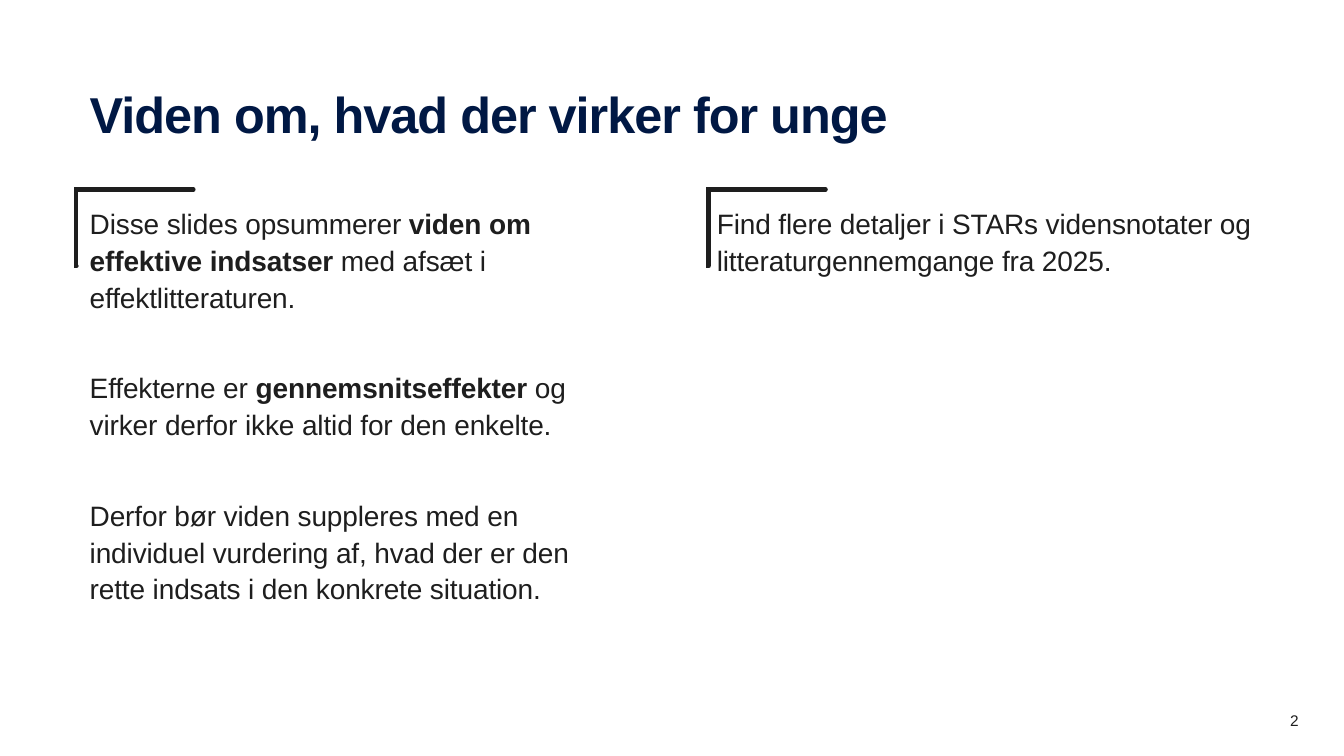
from dataclasses import dataclass

from lxml import etree
from pptx import Presentation
from pptx import util as u
from pptx.dml.color import RGBColor
from pptx.enum import shapes, text
from pptx.oxml.ns import qn
from pptx.slide import Slide


@dataclass(frozen=True)
class Theme:
    font: str = "Arial"
    title_color: str = "001844"
    ink: str = "1E1E1E"
    title_size: int = 36
    body_size: int = 20
    number_size: int = 11
    line_width: int = 3


@dataclass(frozen=True)
class Span:
    content: str
    bold: bool = False


@dataclass(frozen=True)
class TextBlock:
    left: float
    top: float
    width: float
    height: float
    paragraphs: list[list[Span]]
    size: int
    color: str
    line_spacing: float = 1.0
    space_after: int = 0
    tracking: int = 0
    align: text.PP_ALIGN = text.PP_ALIGN.LEFT
    anchor: text.MSO_ANCHOR = text.MSO_ANCHOR.TOP


@dataclass(frozen=True)
class Column:
    text_left: float
    bracket_left: float
    paragraphs: list[list[Span]]


THEME = Theme()
BRACKET_TOP, BRACKET_WIDTH, BRACKET_HEIGHT = 1.88, 1.16, 0.76
BRACKET_BEND = 100300

COLUMNS = [
    Column(7.11, 7.03, [
        [Span("Find flere detaljer i STARs vidensnotater og litteraturgennemgange fra 2025.")],
    ]),
    Column(0.89, 0.76, [
        [Span("Disse slides opsummerer "),
         Span("viden om effektive indsatser ", True),
         Span("med afsæt i effektlitteraturen.")],
        [Span("Effekterne er "),
         Span("gennemsnitseffekter", True),
         Span(" og virker derfor ikke altid for den enkelte.")],
        [Span("Derfor bør viden suppleres med en individuel vurdering af, "
              "hvad der er den rette indsats i den konkrete situation.")],
    ]),
]


def add_text(page: Slide, block: TextBlock) -> None:
    box = page.shapes.add_textbox(
        u.Inches(block.left), u.Inches(block.top),
        u.Inches(block.width), u.Inches(block.height))
    frame = box.text_frame
    frame.word_wrap = True
    frame.vertical_anchor = block.anchor
    frame.margin_left = frame.margin_right = frame.margin_top = frame.margin_bottom = 0
    for index, spans in enumerate(block.paragraphs):
        para = frame.add_paragraph() if index else frame.paragraphs[0]
        para.alignment = block.align
        para.line_spacing = block.line_spacing
        para.space_after = u.Pt(block.space_after)
        para.font.name = THEME.font
        para.font.size = u.Pt(block.size)
        para.font.color.rgb = RGBColor.from_string(block.color)
        for span in spans:
            run = para.add_run()
            run.text = span.content
            run.font.bold = span.bold
            run.font._element.set("spc", str(block.tracking))


def add_bracket(page: Slide, left: float) -> None:
    bracket = page.shapes.add_connector(
        shapes.MSO_CONNECTOR.ELBOW,
        u.Inches(left + BRACKET_WIDTH), u.Inches(BRACKET_TOP),
        u.Inches(left), u.Inches(BRACKET_TOP + BRACKET_HEIGHT))
    bracket.line.color.rgb = RGBColor.from_string(THEME.ink)
    bracket.line.width = u.Pt(THEME.line_width)
    properties = bracket._element.spPr
    guides = properties.find(qn("a:prstGeom")).find(qn("a:avLst"))
    etree.SubElement(guides, qn("a:gd"), name="adj1", fmla=f"val {BRACKET_BEND}")
    outline = properties.find(qn("a:ln"))
    outline.set("cap", "rnd")
    etree.SubElement(outline, qn("a:miter"), lim="800000")
    etree.SubElement(properties, qn("a:effectLst"))


def main() -> None:
    deck = Presentation()
    deck.slide_width, deck.slide_height = u.Inches(13.33), u.Inches(7.5)
    page = deck.slides.add_slide(deck.slide_layouts[6])

    add_text(page, TextBlock(
        12.44, 7.08, 0.44, 0.14, [[Span("2")]], THEME.number_size, THEME.ink,
        align=text.PP_ALIGN.RIGHT, anchor=text.MSO_ANCHOR.MIDDLE))
    add_text(page, TextBlock(
        0.89, 0.89, 9.74, 0.86, [[Span("Viden om, hvad der virker for unge", True)]],
        THEME.title_size, THEME.title_color, line_spacing=0.9, tracking=-70))
    for column in COLUMNS:
        add_text(page, TextBlock(
            column.text_left, 2.02, 5.33, 3.94, column.paragraphs,
            THEME.body_size, THEME.ink,
            line_spacing=1.1, space_after=38, tracking=-10))
        add_bracket(page, column.bracket_left)

    deck.save("out.pptx")


if __name__ == "__main__":
    main()
